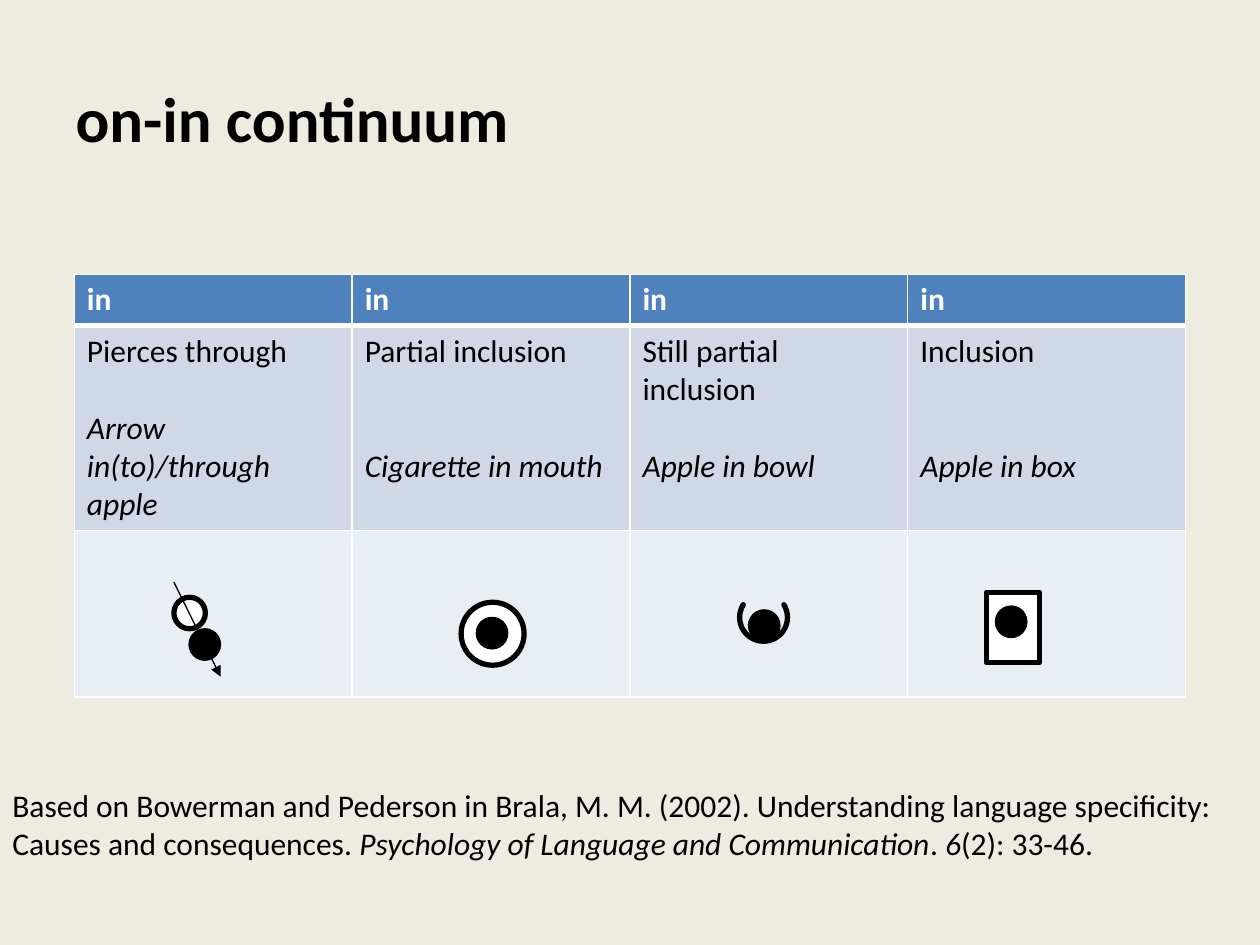
from dataclasses import dataclass

from lxml import etree
from pptx import Presentation
from pptx.dml.color import RGBColor
from pptx.enum.shapes import MSO_CONNECTOR, MSO_SHAPE
from pptx.enum.text import MSO_ANCHOR, PP_ALIGN
from pptx.oxml import parse_xml
from pptx.oxml.ns import nsdecls, qn
from pptx.util import Inches, Pt

OVAL, RECT, BOWL = MSO_SHAPE.OVAL, MSO_SHAPE.RECTANGLE, MSO_SHAPE.BLOCK_ARC
LINE = MSO_CONNECTOR.STRAIGHT
LEFT, MIDDLE = PP_ALIGN.LEFT, MSO_ANCHOR.MIDDLE


@dataclass(frozen=True)
class Theme:
    """Colours, type sizes and line widths."""
    font: str = "Calibri"
    paper: str = "EEECE1"
    ink: str = "000000"
    white: str = "FFFFFF"
    head: str = "4F81BD"
    body: str = "D0D8E8"
    foot: str = "E9EDF4"
    title: int = 36
    text: int = 18
    gap: int = 22
    thin: float = 0.75
    thick: float = 3


class Page:
    """Draws on one slide, on a grid of 100 columns by 75 rows."""

    def __init__(self, deck, theme):
        """Add a title-only slide with a plain background."""
        self.theme = theme
        self.unit = deck.slide_width / 100
        self.slide = deck.slides.add_slide(deck.slide_layouts[5])
        self.paint(self.slide.background.fill, theme.paper)

    def grid(self, *cells):
        """Turn grid counts into lengths."""
        return [round(cell * self.unit) for cell in cells]

    def paint(self, fill, tint):
        """Fill with one solid colour."""
        fill.solid()
        fill.fore_color.rgb = RGBColor.from_string(tint)

    def say(self, para, text, size=None, tint=None, bold=False, slant=False):
        """Add one styled run."""
        run = para.add_run()
        run.text = text
        font = run.font
        font.name, font.size = self.theme.font, Pt(size or self.theme.text)
        font.bold, font.italic = bold, slant
        font.color.rgb = RGBColor.from_string(tint or self.theme.ink)

    def title(self, text, *box):
        """Place and fill the title."""
        shape = self.slide.shapes.title
        shape.left, shape.top, shape.width, shape.height = self.grid(*box)
        frame = shape.text_frame
        frame.vertical_anchor = MIDDLE
        para = frame.paragraphs[0]
        para.alignment = LEFT
        self.say(para, text, self.theme.title, bold=True)

    def note(self, parts, *box):
        """Add a text box of plain and slanted runs."""
        frame = self.slide.shapes.add_textbox(*self.grid(*box)).text_frame
        frame.word_wrap = True
        for text, slant in parts:
            self.say(frame.paragraphs[0], text, slant=slant)

    def cell(self, cell, tint, top=1, base=1):
        """Set the borders and fill of a table cell."""
        props = cell._tc.get_or_add_tcPr()
        for side, width in zip("LRTB", (1, 1, top, base)):
            props.append(parse_xml(
                f'<a:ln{side} {nsdecls("a")} w="{Pt(width)}"><a:solidFill>'
                f'<a:srgbClr val="{self.theme.white}"/></a:solidFill></a:ln{side}>'))
        self.paint(cell.fill, tint)

    def table(self, items, rows, *box):
        """Add the table of relations with a row left for signs."""
        look = self.theme
        table = self.slide.shapes.add_table(len(rows), len(items), *self.grid(*box)).table
        for row, high in zip(table.rows, self.grid(*rows)):
            row.height = high
        for col, (head, label, case, lines) in enumerate(items):
            top, mid, low = (table.cell(row, col) for row in range(3))
            self.cell(top, look.head, base=look.thick)
            self.cell(mid, look.body, top=look.thick)
            self.cell(low, look.foot)
            self.say(top.text_frame.paragraphs[0], head, tint=look.white, bold=True)
            self.say(mid.text_frame.paragraphs[0], label)
            para = mid.text_frame.add_paragraph()
            para.space_before = Pt(lines * look.gap)
            self.say(para, case, slant=True)

    def shape(self, kind, tint, width, *box):
        """Add an outlined shape."""
        shape = self.slide.shapes.add_shape(kind, *self.grid(*box))
        shape.shadow.inherit = False
        self.paint(shape.fill, tint)
        self.paint(shape.line.fill, self.theme.ink)
        shape.line.width = Pt(width)
        return shape

    def dot(self, left, top):
        """Add a solid dot."""
        self.shape(OVAL, self.theme.ink, self.theme.thin, left, top, 2.5, 2.5)

    def ring(self, kind, *box):
        """Add a white shape with a thick outline."""
        return self.shape(kind, self.theme.white, self.theme.thick, *box)

    def bowl(self, *box):
        """Add a bowl open at the top."""
        shape = self.ring(BOWL, *box)
        for spot, value in enumerate((328 * 0.6, 212 * 0.6, 0)):
            shape.adjustments[spot] = value

    def arrow(self, *ends):
        """Add a thin line with an arrowhead at its end."""
        arrow = self.slide.shapes.add_connector(LINE, *self.grid(*ends))
        self.paint(arrow.line.fill, self.theme.ink)
        arrow.line.width = Pt(self.theme.thin)
        line = arrow._element.spPr.find(qn("a:ln"))
        etree.SubElement(line, qn("a:tailEnd"), type="triangle")
        etree.SubElement(arrow._element.spPr, qn("a:effectLst"))


def main():
    """Build and save the slide."""
    deck = Presentation()
    deck.slide_width, deck.slide_height = Inches(10), Inches(7.5)
    page = Page(deck, Theme())
    page.title("on-in continuum", 5, 3, 90, 12.6)
    page.table([
        ("in", "Pierces through", "Arrow in(to)/through apple", 1),
        ("in", "Partial inclusion", "Cigarette in mouth", 2),
        ("in", "Still partial inclusion", "Apple in bowl", 1),
        ("in", "Inclusion", "Apple in box", 2),
    ], (4.05, 16.2, 13.2), 5.9, 21.8, 88.2, 33.45)
    page.dot(15, 49.9)
    page.ring(OVAL, 13.8, 47.4, 2.5, 2.5)
    page.arrow(13.8, 46.2, 17.5, 53.7)
    page.ring(OVAL, 36.6, 47.8, 5, 5)
    page.dot(37.8, 49)
    page.dot(59.4, 48.4)
    page.bowl(58.7, 47.1, 3.8, 3.8)
    page.ring(RECT, 78.3, 47, 4.2, 5.6)
    page.dot(79, 48.1)
    page.note([
        ("Based on Bowerman and Pederson in Brala, M. M. (2002). Understanding "
         "language specificity: Causes and consequences. ", False),
        ("Psychology of Language and Communication", True),
        (". ", False),
        ("6", True),
        ("(2): 33-46.", False),
    ], 0, 61.9, 100, 7.1)
    deck.save("out.pptx")


if __name__ == "__main__":
    main()
